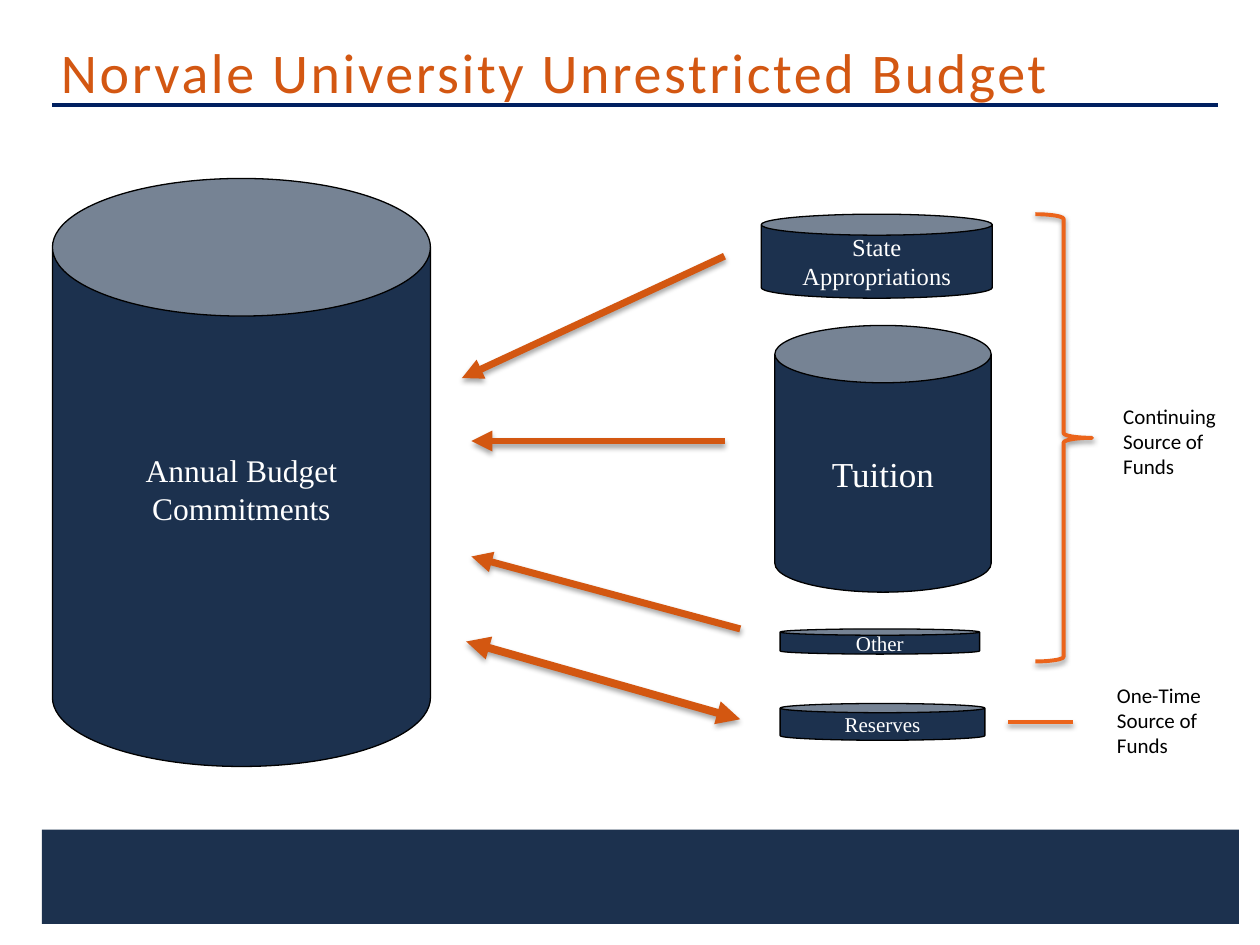
from dataclasses import dataclass

from lxml.etree import SubElement
from pptx import Presentation
from pptx.dml.color import RGBColor
from pptx.enum.shapes import MSO_CONNECTOR, MSO_SHAPE
from pptx.enum.text import MSO_ANCHOR, PP_ALIGN
from pptx.oxml.ns import qn
from pptx.util import Inches, Pt


@dataclass(frozen=True)
class Theme:
    navy: str = "1C314E"
    rule: str = "002060"
    arrow: str = "D35711"
    bracket: str = "EB641B"
    title: str = "D35712"
    white: str = "FFFFFF"
    black: str = "000000"
    sans: str = "Calibri"
    serif: str = "Times New Roman"
    title_size: int = 32
    note_size: int = 12
    outline: float = 0.75
    rule_width: float = 2
    bracket_width: float = 2.25
    arrow_width: float = 4
    exchange_width: float = 4.5


THEME = Theme()
COLUMNS, ROWS = 120, 90
CELL = Inches(10) / COLUMNS

CANS = [
    ("Annual Budget\nCommitments", (5, 17, 36, 56), 0.364, 18),
    ("State\nAppropriations", (72.5, 20.4, 22, 8), 0.25, 14),
    ("Tuition", (73.8, 31, 20.6, 25.4), 0.265, 20),
    ("Other", (74.3, 59.9, 19, 2.4), 0.25, 12),
    ("Reserves", (74.3, 67, 19.5, 3.5), 0.25, 12),
]
FUNDING_ARROWS = [
    ((69, 24.4), (44, 36)),
    ((69, 42), (44.9, 42)),
    ((70.5, 59.9), (44.9, 53)),
]
NOTES = [
    ("Continuing Source of Funds", (105.8, 37.8, 12, 8.5)),
    ("One-Time Source of Funds", (105.2, 64.4, 13, 8.5)),
]


def color(value):
    return RGBColor.from_string(value)


def grid(*cells):
    return [round(cell * CELL) for cell in cells]


def set_line(shape, value, width):
    shape.line.color.rgb = color(value)
    shape.line.width = Pt(width)


def set_effects(shape, opacity=0):
    properties = shape._element.spPr
    effects = properties.find(qn("a:effectLst"))
    if effects is None:
        effects = SubElement(properties, qn("a:effectLst"))
    if opacity:
        shadow = SubElement(effects, qn("a:outerShdw"), blurRad=str(Pt(3.1)),
                            dist=str(Pt(1.8)), dir="5400000", rotWithShape="0")
        black = SubElement(shadow, qn("a:srgbClr"), val=THEME.black)
        SubElement(black, qn("a:alpha"), val=str(opacity * 1000))


def write_text(shape, text, size, font, value, alignment=PP_ALIGN.LEFT):
    shape.text_frame.text = text
    for paragraph in shape.text_frame.paragraphs:
        paragraph.alignment = alignment
        for run in paragraph.runs:
            run.font.size = Pt(size)
            run.font.name = font
            run.font.color.rgb = color(value)


def add_text(slide, text, box, size, value):
    shape = slide.shapes.add_textbox(*grid(*box))
    shape.text_frame.word_wrap = True
    write_text(shape, text, size, THEME.sans, value)
    return shape


def add_title(slide, text):
    shape = add_text(slide, text, (4, 3, 114, 7), THEME.title_size, THEME.title)
    shape.text_frame.margin_left = Inches(0.15)
    shape.text_frame.margin_top = Inches(0.05)
    for run in shape.text_frame.paragraphs[0].runs:
        run._r.get_or_add_rPr().set("spc", "150")


def add_band(slide, box):
    band = slide.shapes.add_shape(MSO_SHAPE.RECTANGLE, *grid(*box))
    band.shadow.inherit = False
    band.fill.solid()
    band.fill.fore_color.rgb = color(THEME.navy)
    band.line.fill.background()


def add_can(slide, text, box, depth, size):
    can = slide.shapes.add_shape(MSO_SHAPE.CAN, *grid(*box))
    can.adjustments[0] = depth
    can.shadow.inherit = False
    can.fill.solid()
    can.fill.fore_color.rgb = color(THEME.navy)
    set_line(can, THEME.black, THEME.outline)
    can.text_frame.word_wrap = False
    can.text_frame.vertical_anchor = MSO_ANCHOR.MIDDLE
    write_text(can, text, size, THEME.serif, THEME.white, PP_ALIGN.CENTER)
    return can


def add_line(slide, start, end, value, width, opacity=0, ends=()):
    line = slide.shapes.add_connector(MSO_CONNECTOR.STRAIGHT, *grid(*start, *end))
    set_line(line, value, width)
    for end_name in ends:
        SubElement(line.line._get_or_add_ln(), qn(f"a:{end_name}"), type="triangle")
    set_effects(line, opacity)


def add_brace(slide, box):
    brace = slide.shapes.add_shape(MSO_SHAPE.RIGHT_BRACE, *grid(*box))
    brace.fill.background()
    set_line(brace, THEME.bracket, THEME.bracket_width)
    brace.shadow.inherit = False
    set_effects(brace, 38)


def main():
    presentation = Presentation()
    presentation.slide_width, presentation.slide_height = grid(COLUMNS, ROWS)
    slide = presentation.slides.add_slide(presentation.slide_layouts[6])
    slide.background.fill.solid()
    slide.background.fill.fore_color.rgb = color(THEME.white)

    add_band(slide, (4, 79, 114, 9))
    add_line(slide, (5, 10), (116, 10), THEME.rule, THEME.rule_width)
    add_title(slide, "Norvale University Unrestricted Budget")

    cans = [add_can(slide, *can) for can in CANS]
    cans[0].text_frame.margin_bottom = Inches(0.34)

    for start, end in FUNDING_ARROWS:
        add_line(slide, start, end, THEME.arrow, THEME.arrow_width, 35, ("tailEnd",))
    add_line(slide, (44.4, 61.1), (70.5, 68.5), THEME.arrow,
             THEME.exchange_width, 35, ("headEnd", "tailEnd"))

    add_brace(slide, (98.6, 20.4, 5.4, 42.6))
    add_line(slide, (96, 68.8), (102.2, 68.8), THEME.bracket, THEME.bracket_width, 38)
    for text, box in NOTES:
        add_text(slide, text, box, THEME.note_size, THEME.black)

    presentation.save("out.pptx")


if __name__ == "__main__":
    main()
